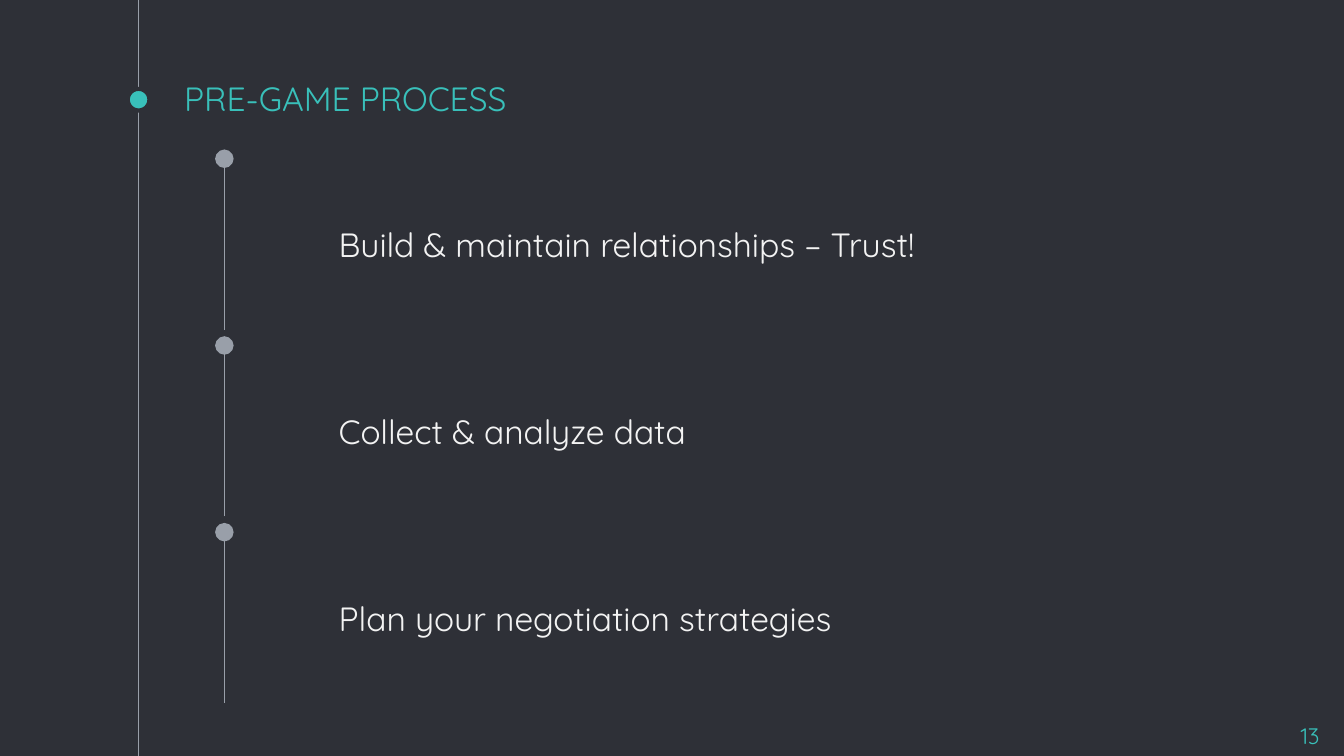
from lxml.etree import SubElement
from pptx import Presentation
from pptx.dml.color import RGBColor
from pptx.enum.shapes import MSO_CONNECTOR, MSO_SHAPE
from pptx.enum.text import MSO_ANCHOR, MSO_AUTO_SIZE, PP_ALIGN
from pptx.oxml.ns import qn
from pptx.util import Cm, Pt

DARK, TEAL, GREY, PALE = "2E3037", "39C0BA", "999FA9", "F3F3F3"
WIDTH, HEIGHT = 25.4, 14.29
STEPS = [
    ("Build & maintain relationships – Trust!", 13.64),
    ("Collect & analyze data", 14.25),
    ("Plan your negotiation strategies", 15.54),
]


def paint(form, color):
    """Give a fill or line format a solid colour."""
    form.solid()
    form.fore_color.rgb = RGBColor.from_string(color)


def place(shape, left, top, width, height):
    """Set the box of a shape in centimetres."""
    shape.left, shape.top = Cm(left), Cm(top)
    shape.width, shape.height = Cm(width), Cm(height)


def write(shape, text, size=18, color=PALE, align=PP_ALIGN.LEFT, anchor=MSO_ANCHOR.TOP):
    """Put formatted text into a shape."""
    frame = shape.text_frame
    frame.word_wrap = True
    frame.auto_size = MSO_AUTO_SIZE.NONE
    frame.vertical_anchor = anchor
    frame.margin_left = frame.margin_right = Cm(0.25)
    frame.margin_top = frame.margin_bottom = Cm(0.25)
    para = frame.paragraphs[0]
    para.alignment = align
    run = para.add_run()
    run.text = text
    run.font.name = "Quicksand"
    run.font.size = Pt(size)
    paint(run.font.fill, color)


def label(slide, text, box, **style):
    """Add a text box at the given box."""
    write(slide.shapes.add_textbox(*map(Cm, box)), text, **style)


def rule(slide, x, start, end, dot=False):
    """Draw a vertical line, with a round end if asked."""
    line = slide.shapes.add_connector(
        MSO_CONNECTOR.STRAIGHT, Cm(x), Cm(start), Cm(x), Cm(end)
    )
    line.line.width = Pt(0.75)
    paint(line.line.fill, GREY)
    if dot:
        SubElement(line.line._get_or_add_ln(), qn("a:tailEnd"),
                   type="oval", w="lg", len="lg")
    SubElement(line._element.spPr, qn("a:effectLst"))


def spine(slide, left, top, height):
    """Draw the full-height line and its title marker."""
    rule(slide, left, top, top + height)
    size = 0.41
    mark = slide.shapes.add_shape(
        MSO_SHAPE.OVAL, Cm(left - size / 2), Cm(top + 1.68), Cm(size), Cm(size)
    )
    mark.shadow.inherit = False
    paint(mark.fill, TEAL)
    paint(mark.line.fill, DARK)
    mark.line.width = Pt(2.25)


def head(slide, text, box):
    """Place and fill the title."""
    title = slide.shapes.title
    place(title, *box)
    write(title, text, color=TEAL, anchor=MSO_ANCHOR.BOTTOM)


def track(slide, left, top, height):
    """Stack the steps along a dotted track."""
    gap = 0.3
    pitch = (height + gap) / len(STEPS)
    for i, (text, width) in enumerate(STEPS):
        y = top + i * pitch
        rule(slide, left, y + pitch - gap, y, dot=True)
        label(slide, text, (left + 1.91, y + 0.99, width, 0.79))


def main():
    """Build and save the slide."""
    deck = Presentation()
    deck.slide_width, deck.slide_height = Cm(WIDTH), Cm(HEIGHT)
    slide = deck.slides.add_slide(deck.slide_layouts[5])
    paint(slide.background.fill, DARK)
    spine(slide, 2.62, 0, HEIGHT)
    head(slide, "PRE-GAME PROCESS", (3.23, 1.52, 19.05, 0.97))
    track(slide, 4.24, 3, 10.29)
    label(slide, "13", (23.67, 13.41, 1.52, 0.86),
          size=12, color=TEAL, align=PP_ALIGN.RIGHT)
    deck.save("out.pptx")


if __name__ == "__main__":
    main()
